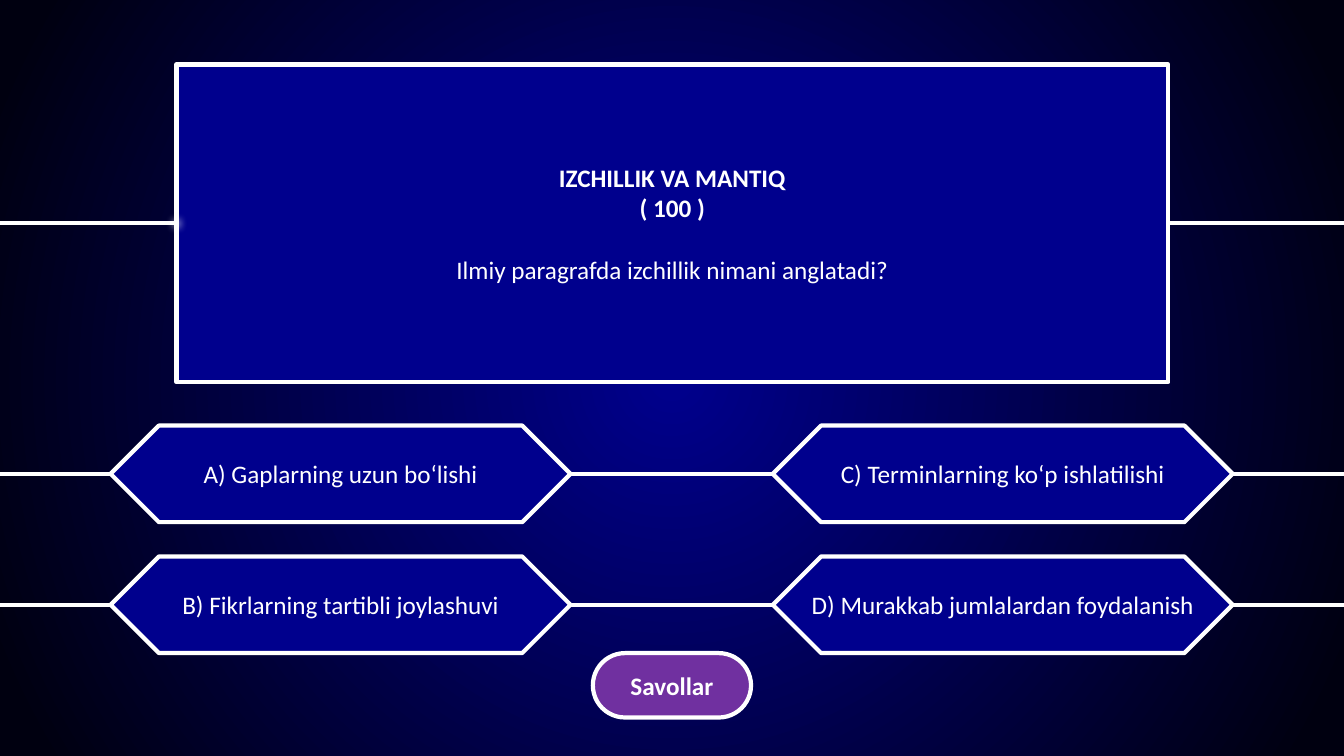
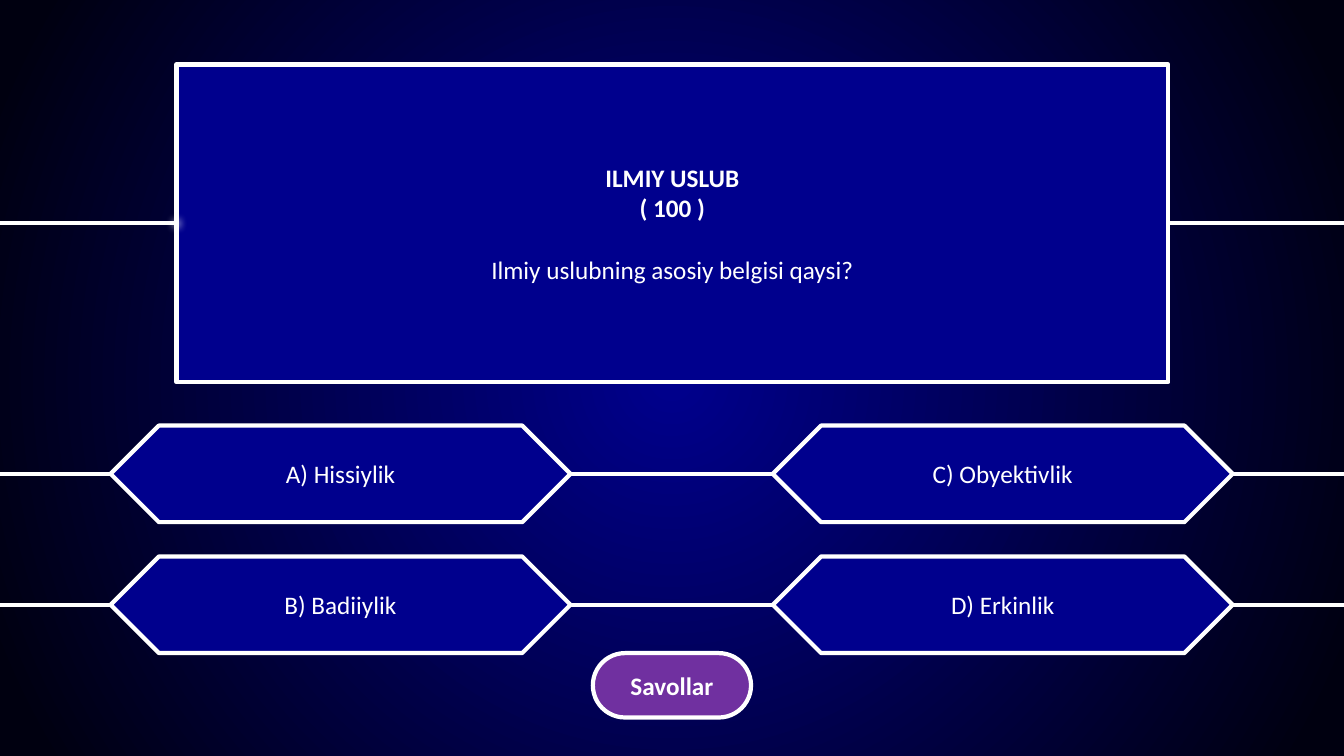
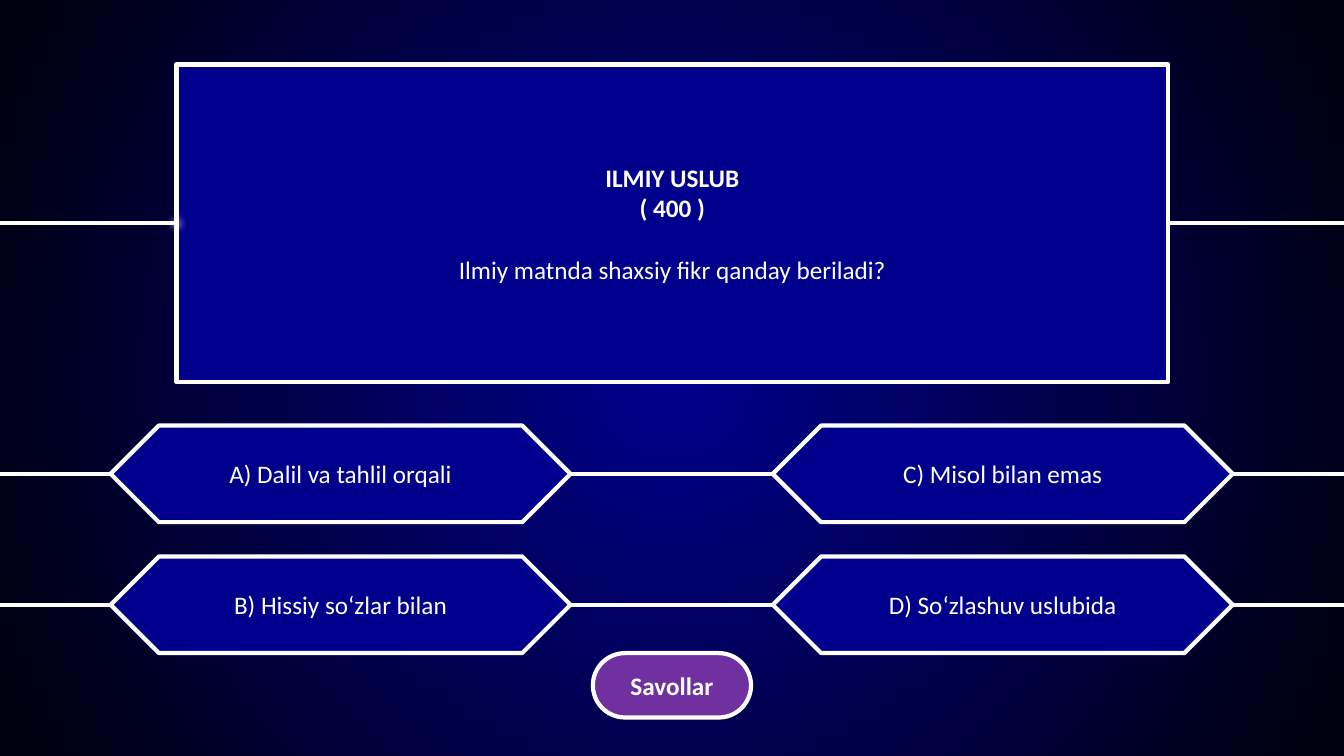
from lxml.etree import SubElement
from pptx import Presentation
from pptx.dml.color import RGBColor
from pptx.enum.shapes import MSO_CONNECTOR, MSO_SHAPE
from pptx.enum.text import MSO_ANCHOR, MSO_AUTO_SIZE, PP_ALIGN
from pptx.oxml.ns import qn
from pptx.util import Pt

BLUE = RGBColor(0x00, 0x00, 0x8D)
NIGHT = RGBColor(0x00, 0x00, 0x10)
PURPLE = RGBColor(0x70, 0x30, 0xA0)
WHITE = RGBColor(0xFF, 0xFF, 0xFF)

SLIDE_W, SLIDE_H = 960, 540
QUESTION_X, QUESTION_Y, QUESTION_W, QUESTION_H = 126, 46, 708.5, 227
QUESTION_MID = QUESTION_Y + QUESTION_H / 2
ANSWER_W, ANSWER_H = 328.5, 69
ANSWER_LEFTS = (79, 552)
ANSWER_MIDS = (338.5, 432)
BUTTON_W, BUTTON_H, BUTTON_Y = 113, 46, 466.5

QUESTIONS = [
    ("IZCHILLIK VA MANTIQ", "( 100 )", "Ilmiy paragrafda izchillik nimani anglatadi?",
     ("A) Gaplarning uzun bo‘lishi", "B) Fikrlarning tartibli joylashuvi",
      "C) Terminlarning ko‘p ishlatilishi", "D) Murakkab jumlalardan foydalanish")),
    ("ILMIY USLUB", "( 100 )", "Ilmiy uslubning asosiy belgisi qaysi?",
     ("A) Hissiylik", "B) Badiiylik", "C) Obyektivlik", "D) Erkinlik")),
    ("ILMIY USLUB", "( 400 )", "Ilmiy matnda shaxsiy fikr qanday beriladi?",
     ("A) Dalil va tahlil orqali", "B) Hissiy so‘zlar bilan",
      "C) Misol bilan emas", "D) So‘zlashuv uslubida")),
]


def style_panel(sp, color):
    sp.fill.solid()
    sp.fill.fore_color.rgb = color
    sp.line.color.rgb = WHITE
    sp.line.width = Pt(3)


def write_lines(sp, lines):
    tf = sp.text_frame
    tf.word_wrap = True
    tf.auto_size = MSO_AUTO_SIZE.NONE
    tf.vertical_anchor = MSO_ANCHOR.MIDDLE
    for i, (text, bold) in enumerate(lines):
        p = tf.paragraphs[0] if i == 0 else tf.add_paragraph()
        p.text = text
        p.alignment = PP_ALIGN.CENTER
        p.font.name = "Calibri"
        p.font.size = Pt(18)
        p.font.bold = bold
        p.font.color.rgb = WHITE


prs = Presentation()
prs.slide_width, prs.slide_height = Pt(SLIDE_W), Pt(SLIDE_H)

master = prs.slide_master
fill = master.background.fill
fill.gradient()
for stop, color, position in zip(fill.gradient_stops, (BLUE, NIGHT), (0, 0.95)):
    stop.color.rgb = color
    stop.position = position
grad = master.element.find(".//" + qn("p:bgPr")).find(qn("a:gradFill"))
grad.remove(grad.find(qn("a:lin")))
circle = SubElement(grad, qn("a:path"), path="circle")
SubElement(circle, qn("a:fillToRect"), l="50000", t="50000", r="50000", b="50000")

for topic, points, question, answers in QUESTIONS:
    s = prs.slides.add_slide(prs.slide_layouts[5])

    for y in (QUESTION_MID, *ANSWER_MIDS):
        rule = s.shapes.add_connector(MSO_CONNECTOR.STRAIGHT, Pt(SLIDE_W), Pt(y), Pt(0), Pt(y))
        rule.line.color.rgb = WHITE
        rule.line.width = Pt(3)
        SubElement(rule.element.spPr, qn("a:effectLst"))

    title = s.shapes.title
    title.element.getparent().append(title.element)
    title.left, title.top = Pt(QUESTION_X), Pt(QUESTION_Y)
    title.width, title.height = Pt(QUESTION_W), Pt(QUESTION_H)
    geometry = SubElement(title.element.spPr, qn("a:prstGeom"), prst="snip2DiagRect")
    guides = SubElement(geometry, qn("a:avLst"))
    for name in ("adj1", "adj2"):
        SubElement(guides, qn("a:gd"), name=name, fmla="val 50000")
    style_panel(title, BLUE)
    write_lines(title, [(topic, True), (points, True), (question, False)])
    title.text_frame.paragraphs[2].space_before = Pt(22)

    for i, answer in enumerate(answers):
        column, row = divmod(i, 2)
        sp = s.shapes.add_shape(
            MSO_SHAPE.SNIP_2_DIAG_RECTANGLE, Pt(ANSWER_LEFTS[column]),
            Pt(ANSWER_MIDS[row] - ANSWER_H / 2), Pt(ANSWER_W), Pt(ANSWER_H))
        sp.adjustments[0] = sp.adjustments[1] = 0.5
        sp.shadow.inherit = False
        style_panel(sp, BLUE)
        write_lines(sp, [(answer, False)])

    for size, softness in ((21.6, 6), (7.2, 2.5)):
        glow = s.shapes.add_shape(
            MSO_SHAPE.OVAL, Pt(QUESTION_X - size / 2), Pt(QUESTION_MID - size / 2),
            Pt(size), Pt(size))
        glow.fill.solid()
        glow.fill.fore_color.rgb = WHITE
        glow.line.fill.background()
        glow.shadow.inherit = False
        effects = glow.element.spPr.find(qn("a:effectLst"))
        SubElement(effects, qn("a:softEdge"), rad=str(Pt(softness)))

    button = s.shapes.add_shape(
        MSO_SHAPE.ROUNDED_RECTANGLE, Pt((SLIDE_W - BUTTON_W) / 2), Pt(BUTTON_Y),
        Pt(BUTTON_W), Pt(BUTTON_H))
    button.adjustments[0] = 0.5
    button.shadow.inherit = False
    style_panel(button, PURPLE)
    write_lines(button, [("Savollar", True)])

prs.save("out.pptx")
